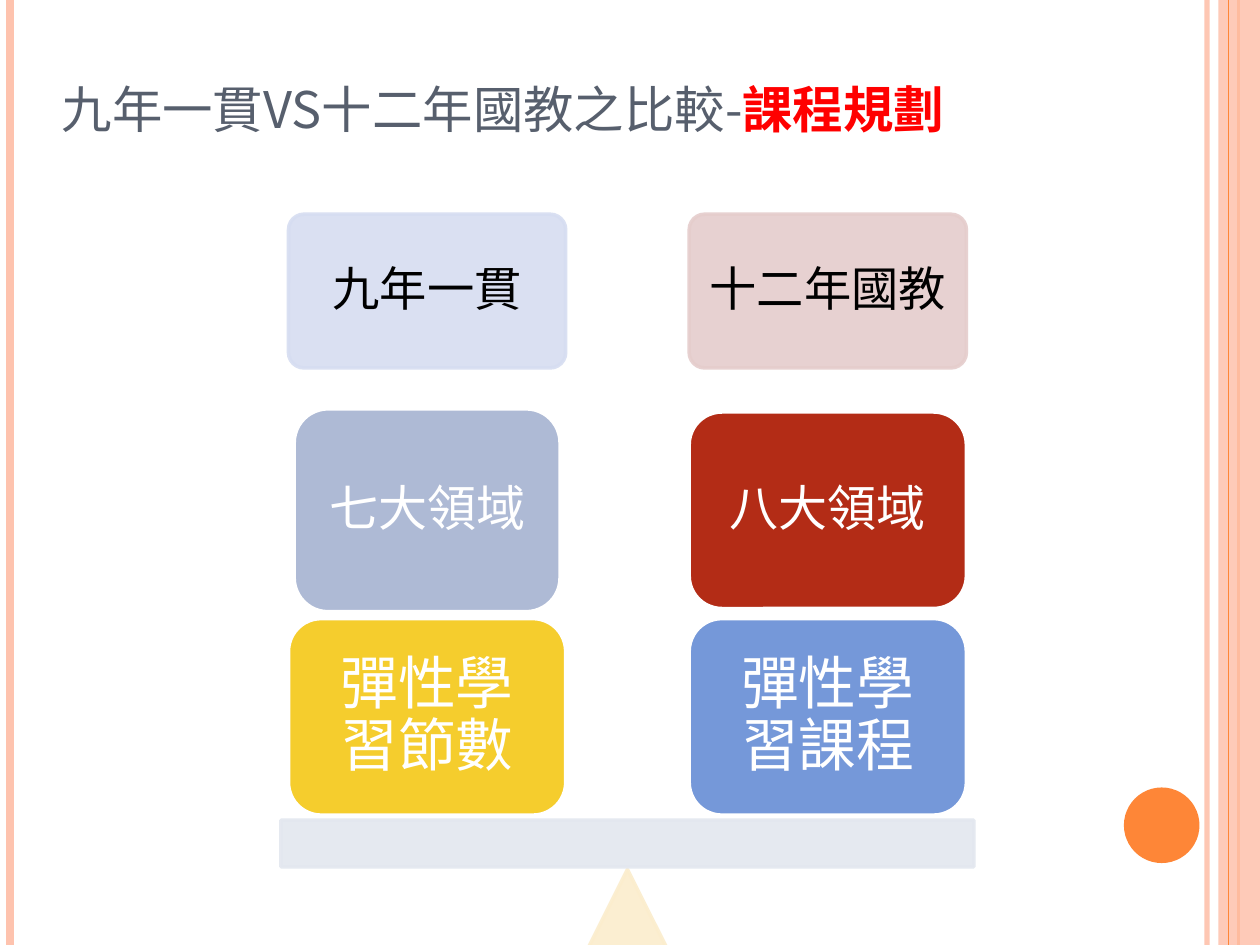
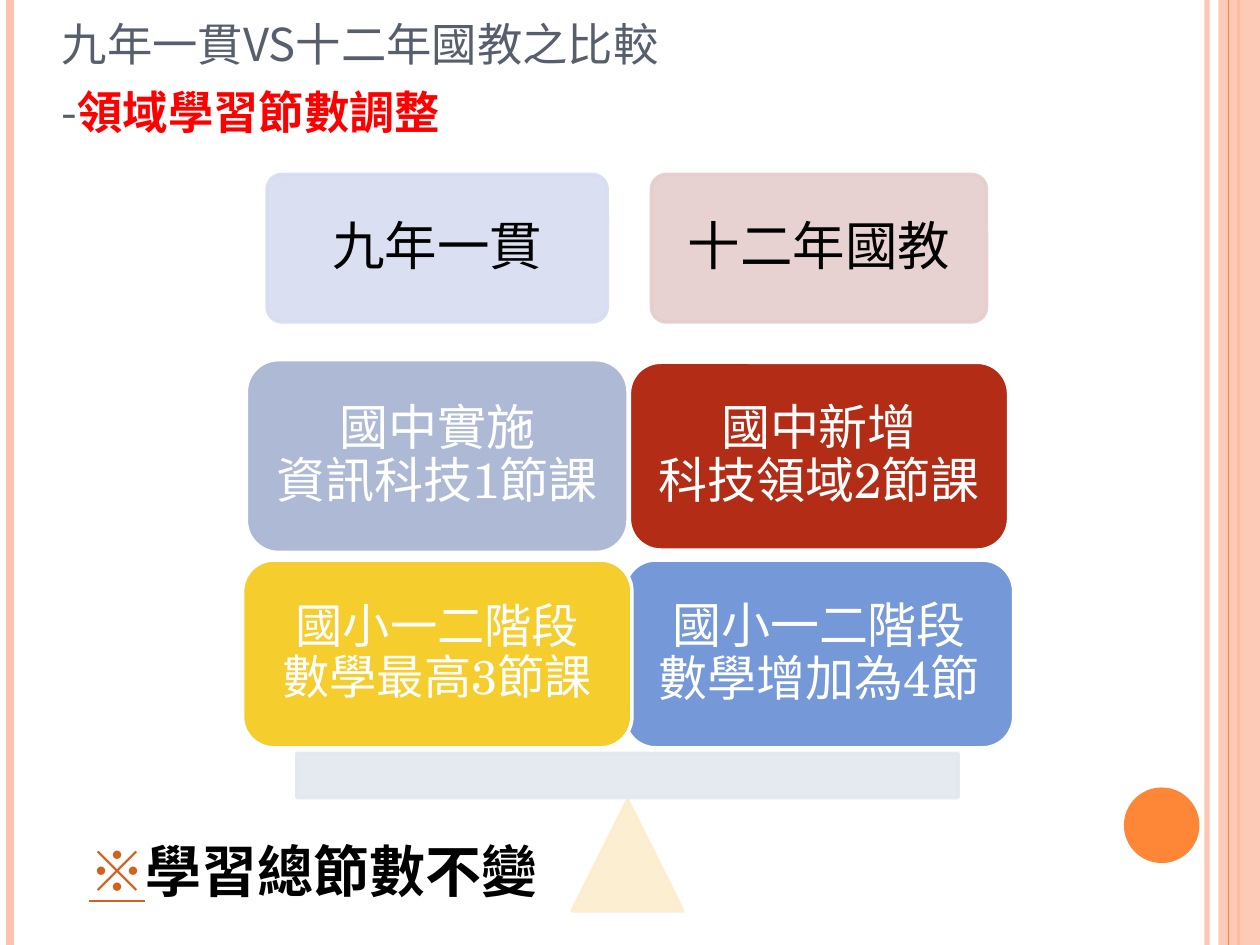
"""Build two slides that weigh two curricula against each other on a balance."""
from lxml.etree import SubElement
from pptx import Presentation
from pptx.dml.color import RGBColor
from pptx.enum.shapes import MSO_CONNECTOR, MSO_SHAPE
from pptx.enum.text import MSO_ANCHOR, MSO_AUTO_SIZE, PP_ALIGN
from pptx.oxml.ns import qn
from pptx.util import Pt

PX = 9144
WIDTH, HEIGHT = 1000, 750
SANS, SERIF = "Noto Sans CJK SC", "TeX Gyre Schola"

WHITE, BLACK = RGBColor(255, 255, 255), RGBColor(0, 0, 0)
SLATE, RED = RGBColor(0x57, 0x5F, 0x6D), RGBColor(255, 0, 0)
PEACH, ORANGE = RGBColor(0xFE, 0xC3, 0xAE), RGBColor(0xFE, 0x86, 0x37)
RUST = RGBColor(0xD2, 0x61, 0x1C)
PALE_BLUE, PALE_ROSE = RGBColor(0xD6, 0xDD, 0xF1), RGBColor(0xE5, 0xCD, 0xCC)
BLUE, BRICK = RGBColor(0x75, 0x98, 0xD9), RGBColor(0xB3, 0x2C, 0x16)
YELLOW, LAVENDER = RGBColor(0xF5, 0xCD, 0x2D), RGBColor(0xAE, 0xBA, 0xD5)
BEAM, PIVOT = RGBColor(0xE3, 0xE7, 0xEF), RGBColor(0xFB, 0xED, 0xCD)

TITLE_BOX = (39, 30, 911, 87)
BALANCE_MIDDLE = 498
STRIPES = [(958, PEACH, 3, 93), (8, PEACH, 4.5, 100), (983, ORANGE, 1.5, 100)]
BAND = (967, 0, 33, HEIGHT)
BAND_EDGE = (975, ORANGE, 0.75, 100)
DOT = (892, 625, 60, 60)

HEAD, LEFT, RIGHT = 0, 0, 1
CARD_PLACES = [
    (LEFT, HEAD, PALE_BLUE), (RIGHT, HEAD, PALE_ROSE),
    (RIGHT, 2, BLUE), (RIGHT, 1, BRICK), (LEFT, 2, YELLOW), (LEFT, 1, LAVENDER),
]

SLIDES = [
    {
        "title": "九年一貫vs十二年國教之比較-", "topic": "課程規劃", "title size": 36,
        "columns": (339, 657), "rows": (231, 405, 569),
        "beam": (651, 550, 37), "pivot": 92,
        "cards": [
            ("九年一貫", 27, 220, 122), ("十二年國教", 27, 220, 122),
            ("彈性學習課程", 33, 220, 156), ("八大領域", 28, 220, 156),
            ("彈性學習節數", 33, 220, 156), ("七大領域", 28, 211, 161),
        ],
        "note": [],
    },
    {
        "title": "九年一貫vs十二年國教之比較\n-", "topic": "領域學習節數調整", "title size": 32.4,
        "columns": (347, 650), "rows": (197, 362, 519),
        "beam": (598, 525, 35), "pivot": 88,
        "cards": [
            ("九年一貫", 30, 270, 117), ("十二年國教", 30, 266, 117),
            ("國小一二階段\n數學增加為4節", 28, 309, 149), ("國中新增\n科技領域2節課", 28, 301, 149),
            ("國小一二階段\n數學最高3節課", 27, 309, 149), ("國中實施\n資訊科技1節課", 28, 303, 153),
        ],
        "note": [("※", RUST, True), ("學習總節數不變", BLACK, False)],
    },
]
NOTE_BOX = (61, 659, 383, 64)


def scale(lengths):
    return [round(length * PX) for length in lengths]


def set_alpha(shape, percent):
    if percent < 100:
        for colour in list(shape.element.spPr.iter(qn("a:srgbClr"))):
            SubElement(colour, qn("a:alpha"), val=str(percent * 1000))


def add_text(para, text, size, colour, latin=SANS, bold=False, small_caps=False):
    """Add the text run by run, with a line break at each newline."""
    for index, line in enumerate(text.split("\n")):
        if index:
            para.add_line_break()
        span = para.add_run()
        span.text = line
        span.font.size, span.font.bold, span.font.name = Pt(size), bold, latin
        span.font.color.rgb = colour
        properties = span.font._element
        SubElement(properties, qn("a:ea"), typeface=SANS)
        if small_caps:
            properties.set("cap", "small")
    return span


def add_block(page, preset, box, fill, alpha=100, line=None):
    block = page.shapes.add_shape(preset, *scale(box))
    block.shadow.inherit = False
    block.fill.solid()
    block.fill.fore_color.rgb = fill
    if line is None:
        block.line.fill.background()
    else:
        block.line.color.rgb, block.line.width = line, Pt(2)
    set_alpha(block, alpha)
    return block


def add_stripe(page, left, colour, width, alpha):
    stripe = page.shapes.add_connector(MSO_CONNECTOR.STRAIGHT, *scale((left, 0, left, HEIGHT)))
    stripe.line.color.rgb, stripe.line.width = colour, Pt(width)
    SubElement(stripe.element.spPr, qn("a:effectLst"))
    set_alpha(stripe, alpha)
    return stripe


def decorate_master(deck, page):
    """Draw the side bands on a page, then move them to the master."""
    bands = [add_stripe(page, *stripe) for stripe in STRIPES]
    bands.append(add_block(page, MSO_SHAPE.RECTANGLE, BAND, PEACH, 87))
    bands.append(add_stripe(page, *BAND_EDGE))
    bands.append(add_block(page, MSO_SHAPE.OVAL, DOT, ORANGE))
    for number, band in enumerate(bands, 101):
        band.element.xpath("./*/p:cNvPr")[0].set("id", str(number))
        deck.slide_master.element.cSld.spTree.append(band.element)


def add_title(page, content):
    title = page.shapes.title
    title.left, title.top, title.width, title.height = scale(TITLE_BOX)
    frame = title.text_frame
    frame.word_wrap, frame.auto_size = True, MSO_AUTO_SIZE.NONE
    frame.vertical_anchor = MSO_ANCHOR.BOTTOM
    para = frame.paragraphs[0]
    para.alignment = PP_ALIGN.LEFT
    size = content["title size"]
    add_text(para, content["title"], size, SLATE, small_caps=True)
    add_text(para, content["topic"], size, RED, bold=True, small_caps=True)


def add_balance(page, content):
    top, width, height = content["beam"]
    side = content["pivot"]
    pivot_box = (BALANCE_MIDDLE - side / 2, top + height + 2, side, side)
    beam_box = (BALANCE_MIDDLE - width / 2, top, width, height)
    add_block(page, MSO_SHAPE.ISOSCELES_TRIANGLE, pivot_box, PIVOT, 90, PIVOT)
    add_block(page, MSO_SHAPE.RECTANGLE, beam_box, BEAM, 90, BEAM)


def add_card(page, middle, row, fill, card):
    text, size, width, height = card
    is_head = row == HEAD
    box = (middle[0] - width / 2, middle[1] - height / 2, width, height)
    block = add_block(page, MSO_SHAPE.ROUNDED_RECTANGLE, box, fill,
                      90 if is_head else 100, fill if is_head else WHITE)
    if is_head:
        block.adjustments[0] = 0.1
    frame = block.text_frame
    frame.word_wrap, frame.vertical_anchor = True, MSO_ANCHOR.MIDDLE
    inset = Pt(0.3 * size)
    frame.margin_left = frame.margin_right = frame.margin_top = frame.margin_bottom = inset
    para = frame.paragraphs[0]
    para.alignment, para.line_spacing = PP_ALIGN.CENTER, 0.9
    add_text(para, text, size, BLACK if is_head else WHITE, SERIF)


def add_note(page, parts):
    frame = page.shapes.add_textbox(*scale(NOTE_BOX)).text_frame
    frame.word_wrap, frame.auto_size = True, MSO_AUTO_SIZE.SHAPE_TO_FIT_TEXT
    for text, colour, underline in parts:
        add_text(frame.paragraphs[0], text, 32, colour, bold=True).font.underline = underline


def main():
    deck = Presentation()
    deck.slide_width, deck.slide_height = scale((WIDTH, HEIGHT))
    for number, content in enumerate(SLIDES):
        page = deck.slides.add_slide(deck.slide_layouts[5])
        if number == 0:
            decorate_master(deck, page)
        add_title(page, content)
        if content["note"]:
            add_note(page, content["note"])
        cards = list(zip(CARD_PLACES, content["cards"]))
        for index, ((column, row, fill), card) in enumerate(cards):
            if index == 2:
                add_balance(page, content)
            middle = content["columns"][column], content["rows"][row]
            add_card(page, middle, row, fill, card)
    deck.save("out.pptx")


if __name__ == "__main__":
    main()
